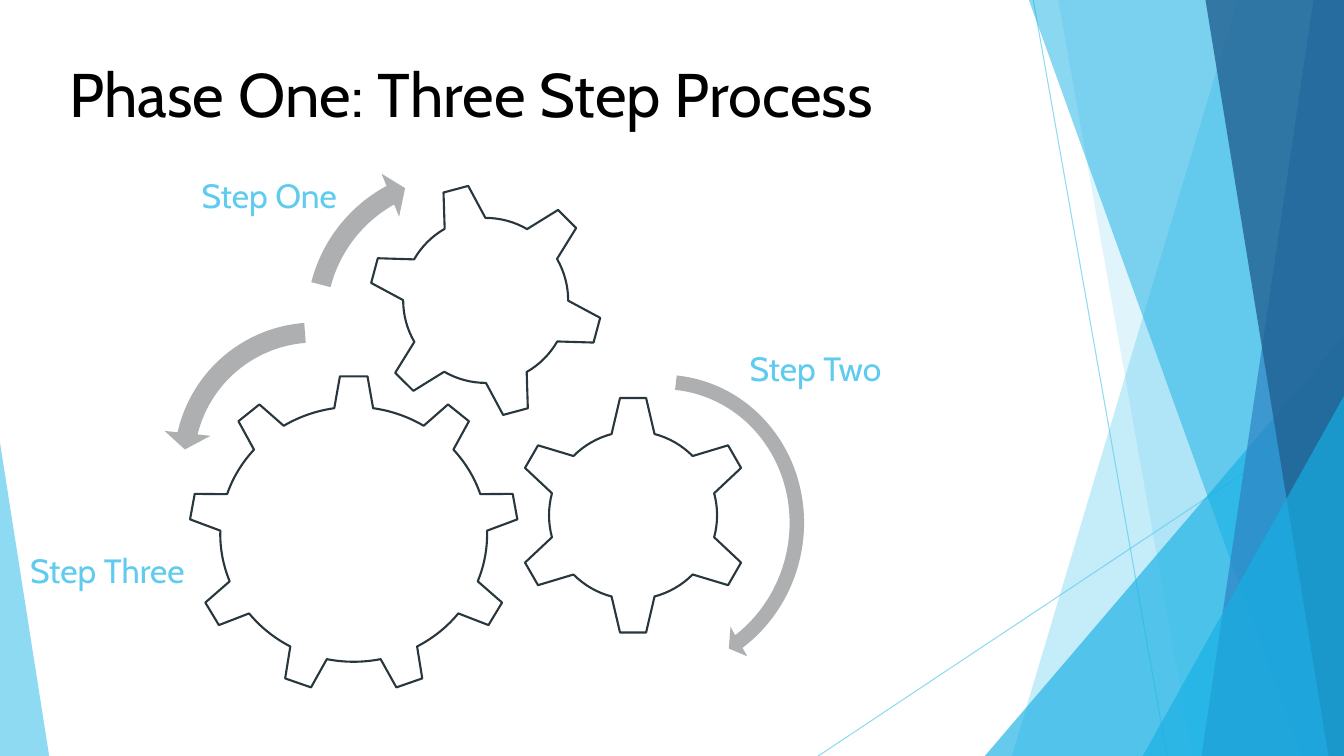
from pptx import Presentation
from pptx.dml.color import RGBColor
from pptx.enum.shapes import MSO_CONNECTOR, MSO_SHAPE
from pptx.enum.text import MSO_ANCHOR, MSO_AUTO_SIZE, PP_ALIGN
from pptx.oxml.ns import qn
from pptx.util import Cm, Pt
from lxml.etree import SubElement

WIDTH, HEIGHT = 33.87, 19.05
FONT = "Cabin"
COLORS = {
    "sky": "5FCBEF",
    "cyan": "17B0E4",
    "blue": "2E83C3",
    "navy": "226292",
    "ink": "28363D",
    "gray": "ADAFB0",
    "white": "FFFFFF",
    "black": "000000",
}


def rgb(name):
    return RGBColor.from_string(COLORS[name])


def set_opacity(sp, percent):
    for clr in sp._element.spPr.iter(qn("a:srgbClr")):
        SubElement(clr, qn("a:alpha"), val=str(percent * 1000))


def paint(sp, color, outline=None):
    sp.shadow.inherit = False
    sp.fill.solid()
    sp.fill.fore_color.rgb = rgb(color)
    if outline:
        sp.line.color.rgb = rgb(outline)
        sp.line.width = Pt(1.5)
    else:
        sp.line.fill.background()


def add_ray(s, x1, y1, x2, y2):
    line = s.shapes.add_connector(
        MSO_CONNECTOR.STRAIGHT, Cm(x1), Cm(y1), Cm(x2), Cm(y2))
    line.line.color.rgb = rgb("sky")
    line.line.width = Pt(0.75)
    set_opacity(line, 70)
    SubElement(line._element.spPr, qn("a:effectLst"))


def add_band(s, top_x, bottom_x, color, opacity):
    """Panel with a slanted left edge that reaches the right slide edge."""
    builder = s.shapes.build_freeform(Cm(top_x), 0)
    builder.add_line_segments(
        [(Cm(WIDTH), 0), (Cm(WIDTH), Cm(HEIGHT)), (Cm(bottom_x), Cm(HEIGHT))])
    sp = builder.convert_to_shape()
    paint(sp, color)
    set_opacity(sp, opacity)


def add_preset(s, kind, box, color, outline=None, rotation=0, adj=()):
    sp = s.shapes.add_shape(kind, *map(Cm, box))
    sp.rotation = rotation
    for i, value in enumerate(adj):
        sp.adjustments[i] = value
    paint(sp, color, outline)
    return sp


def add_corner(s, x, width, height, apex, color, opacity):
    """Triangle standing on the bottom edge of the slide."""
    sp = add_preset(s, MSO_SHAPE.ISOSCELES_TRIANGLE,
                    (x, HEIGHT - height, width, height), color, adj=[apex])
    set_opacity(sp, opacity)


def add_run(tf, text, size, color):
    p = tf.paragraphs[0]
    p.alignment = PP_ALIGN.LEFT
    r = p.add_run()
    r.text = text
    r.font.name = FONT
    r.font.size = Pt(size)
    r.font.color.rgb = rgb(color)


def add_label(s, text, x, y, width):
    tf = s.shapes.add_textbox(Cm(x), Cm(y), Cm(width), Cm(1.27)).text_frame
    tf.word_wrap = False
    tf.auto_size = MSO_AUTO_SIZE.SHAPE_TO_FIT_TEXT
    add_run(tf, text, 24, "sky")


def set_title(s, text):
    title = s.shapes.title
    title.left, title.top, title.width, title.height = map(
        Cm, (1.5, 1.27, 22.22, 2.13))
    tf = title.text_frame
    tf.word_wrap = True
    tf.auto_size = MSO_AUTO_SIZE.NONE
    tf.vertical_anchor = MSO_ANCHOR.TOP
    add_run(tf, text, 44, "black")


def add_facets(s):
    add_ray(s, 26.04, 0, 29.41, HEIGHT)
    add_ray(s, WIDTH, 10.24, 20.62, HEIGHT)
    add_band(s, 31.19, 25.5, "sky", 36)
    add_band(s, 26.67, 30.05, "sky", 20)
    add_corner(s, 24.82, 9.05, 10.59, 1, "cyan", 66)
    add_band(s, 25.93, 32.79, "cyan", 50)
    add_band(s, 33.1, 30.28, "blue", 70)
    add_band(s, 30.38, 33.48, "navy", 80)
    add_corner(s, 28.8, 5.07, 9.07, 1, "cyan", 66)
    add_corner(s, 0, 1.24, 7.9, 0, "sky", 70)


def add_gears(s):
    for kind, box, rotation in (
        (MSO_SHAPE.GEAR_9, (4.75, 9.45, 8.33, 8.03), 0),
        (MSO_SHAPE.GEAR_6, (12.93, 9.96, 6.05, 6.05), 0),
        (MSO_SHAPE.GEAR_6, (9.27, 4.6, 5.94, 5.94), 345),
    ):
        add_preset(s, kind, box, "white", "ink", rotation)


def add_turn_arrows(s):
    right, left = MSO_SHAPE.CIRCULAR_ARROW, MSO_SHAPE.LEFT_CIRCULAR_ARROW
    for kind, box, rotation, adj in (
        (right, (12.73, 9.19, 7.77, 8.13), 13.1,
         (0.047, 2.99, 25.398, 158.113, 0.055)),
        (left, (4.06, 7.8, 7.75, 7.75), 18.4,
         (0.065, 4.3, 104.891, 148.378, 0.075)),
        (right, (7.39, 3.89, 8.36, 8.36), 19.3,
         (0.06, 3.941, 133.138, 105.082, 0.07)),
    ):
        add_preset(s, kind, box, "gray", rotation=rotation, adj=adj)


def main():
    prs = Presentation()
    prs.slide_width, prs.slide_height = Cm(WIDTH), Cm(HEIGHT)
    s = prs.slides.add_slide(prs.slide_layouts[5])

    # Background facets
    add_facets(s)

    # Gear diagram
    add_gears(s)
    add_turn_arrows(s)

    # Title and step labels
    set_title(s, "Phase One: Three Step Process")
    add_label(s, "Step One", 4.83, 4.29, 3.96)
    add_label(s, "Step Two", 18.64, 8.64, 3.91)
    add_label(s, "Step Three", 0.51, 13.74, 4.67)

    prs.save("out.pptx")


if __name__ == "__main__":
    main()
